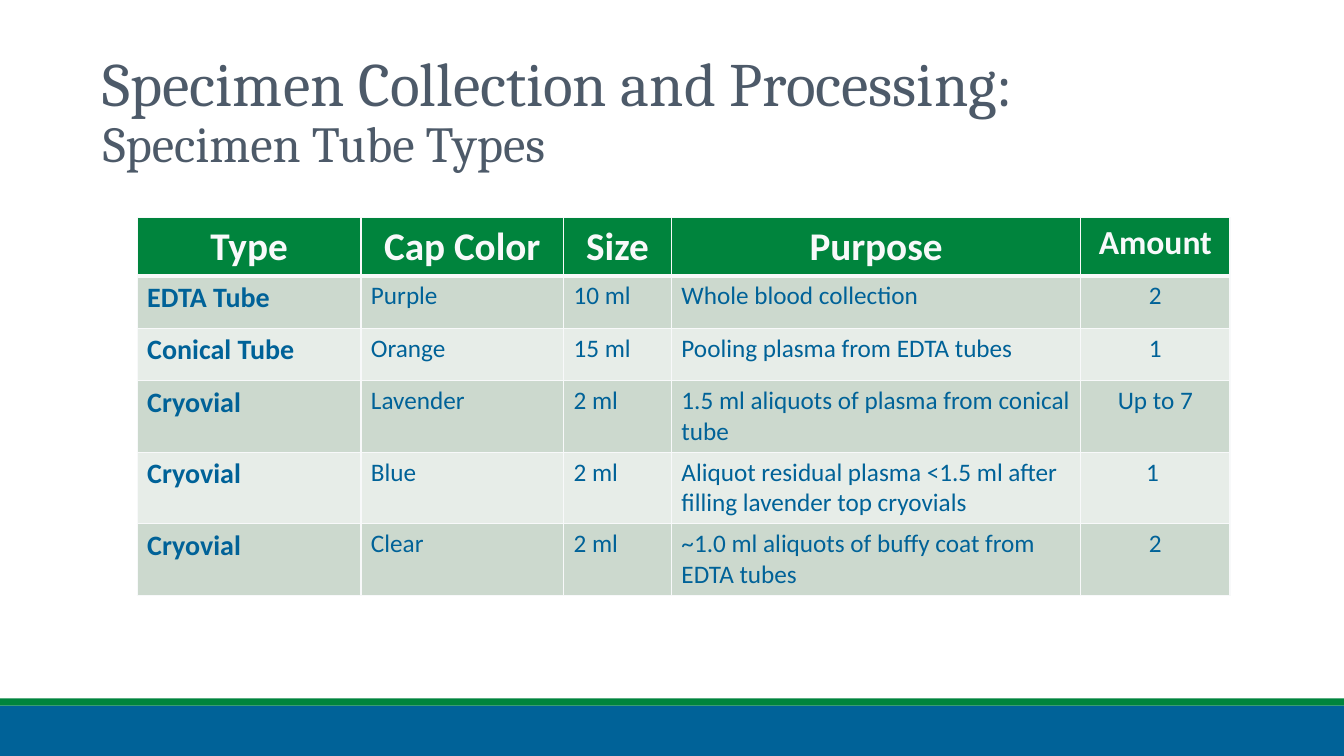
from dataclasses import dataclass

from lxml.etree import SubElement
from pptx import Presentation
from pptx.dml.color import RGBColor
from pptx.enum.shapes import MSO_SHAPE
from pptx.enum.text import MSO_ANCHOR, MSO_AUTO_SIZE, PP_ALIGN
from pptx.oxml.ns import qn
from pptx.util import Inches, Pt

BLUE, GREEN, SLATE, PALE = "006298", "00843D", "4D5A69", "F8F9FA"
BANDS = ("CCD9CE", "E7EDE8")
COL_WIDTHS = (2.22, 2.01, 1.07, 4.06, 1.48)
ROW_HEIGHTS = (0.52, 0.52, 0.52, 0.62, 0.65, 0.52)
HEADERS = ("Type", "Cap Color", "Size", "Purpose", "Amount")


@dataclass
class Bar:
    top: float
    height: float
    color: str


@dataclass
class Tube:
    kind: str
    cap: str
    size: str
    purpose: str
    amount: str


BARS = [Bar(7, 0.5, BLUE), Bar(6.93, 0.07, GREEN)]
TUBES = [
    Tube("EDTA Tube", "Purple", "10 ml", "Whole blood collection", "2"),
    Tube("Conical Tube", "Orange", "15 ml", "Pooling plasma from EDTA tubes", "1"),
    Tube("Cryovial", "Lavender", "2 ml", "1.5 ml aliquots of plasma from conical tube", "Up to 7"),
    Tube("Cryovial", "Blue", "2 ml",
         "Aliquot residual plasma <1.5 ml after filling lavender top cryovials", "1 "),
    Tube("Cryovial", "Clear", "2 ml", "~1.0 ml aliquots of buffy coat from EDTA tubes", "2"),
]


def rgb(value: str) -> RGBColor:
    return RGBColor.from_string(value)


def set_all(target, values: dict) -> None:
    for name, value in values.items():
        setattr(target, name, value)


def add_run(p, text: str, font: str, size: int, color: str, bold: bool = False) -> None:
    r = p.add_run()
    r.text = text
    set_all(r.font, {"name": font, "size": Pt(size), "bold": bold})
    r.font.color.rgb = rgb(color)


def add_bar(s, bar: Bar) -> None:
    sp = s.shapes.add_shape(MSO_SHAPE.RECTANGLE, 0, Inches(bar.top), Inches(13.33), Inches(bar.height))
    sp.shadow.inherit = False
    sp.fill.solid()
    sp.fill.fore_color.rgb = rgb(bar.color)
    sp.line.fill.background()


def add_title(s) -> None:
    sp = s.shapes.title
    set_all(sp, {"left": Inches(0.92), "top": Inches(0.4), "width": Inches(11.5), "height": Inches(1.45)})
    tf = sp.text_frame
    set_all(tf, {"word_wrap": True, "auto_size": MSO_AUTO_SIZE.NONE, "vertical_anchor": MSO_ANCHOR.MIDDLE})
    p = tf.paragraphs[0]
    set_all(p, {"alignment": PP_ALIGN.LEFT, "line_spacing": 0.9})
    add_run(p, "Specimen Collection and Processing:", "Cambria", 44, SLATE)
    p.add_line_break()
    add_run(p, "Specimen Tube Types", "Cambria", 36, SLATE)


def add_borders(cell, top: int, bottom: int) -> None:
    tc_pr = cell._tc.get_or_add_tcPr()
    for side, width in {"L": 1, "R": 1, "T": top, "B": bottom}.items():
        line = SubElement(tc_pr, qn(f"a:ln{side}"), w=str(Pt(width)))
        fill = SubElement(line, qn("a:solidFill"))
        SubElement(fill, qn("a:srgbClr"), val=PALE)


def fill_cell(cell, text: str, row: int, col: int) -> None:
    header, last = row == 0, col == len(HEADERS) - 1
    add_borders(cell, 3 if row == 1 else 1, 3 if header else 1)
    cell.fill.solid()
    cell.fill.fore_color.rgb = rgb(GREEN if header else BANDS[(row - 1) % 2])
    if header:
        size = 24 if last else 28
    else:
        size = 20 if col == 0 else 18
    p = cell.text_frame.paragraphs[0]
    p.alignment = PP_ALIGN.CENTER if header or last else PP_ALIGN.LEFT
    add_run(p, text, "Calibri", size, PALE if header else BLUE, header or col == 0)


def add_tube_table(s) -> None:
    rows = [HEADERS] + [(t.kind, t.cap, t.size, t.purpose, t.amount) for t in TUBES]
    table = s.shapes.add_table(len(rows), len(HEADERS), Inches(1.36), Inches(2.16),
                               Inches(sum(COL_WIDTHS)), Inches(sum(ROW_HEIGHTS))).table
    set_all(table, {"first_row": True, "horz_banding": False})
    for column, width in zip(table.columns, COL_WIDTHS):
        column.width = Inches(width)
    for i, (texts, height) in enumerate(zip(rows, ROW_HEIGHTS)):
        table.rows[i].height = Inches(height)
        for j, text in enumerate(texts):
            fill_cell(table.cell(i, j), text, i, j)


def main() -> None:
    prs = Presentation()
    set_all(prs, {"slide_width": Inches(13.33), "slide_height": Inches(7.5)})
    s = prs.slides.add_slide(prs.slide_layouts.get_by_name("Title Only"))
    for bar in BARS:
        add_bar(s, bar)
    add_title(s)
    add_tube_table(s)
    prs.save("out.pptx")


if __name__ == "__main__":
    main()
